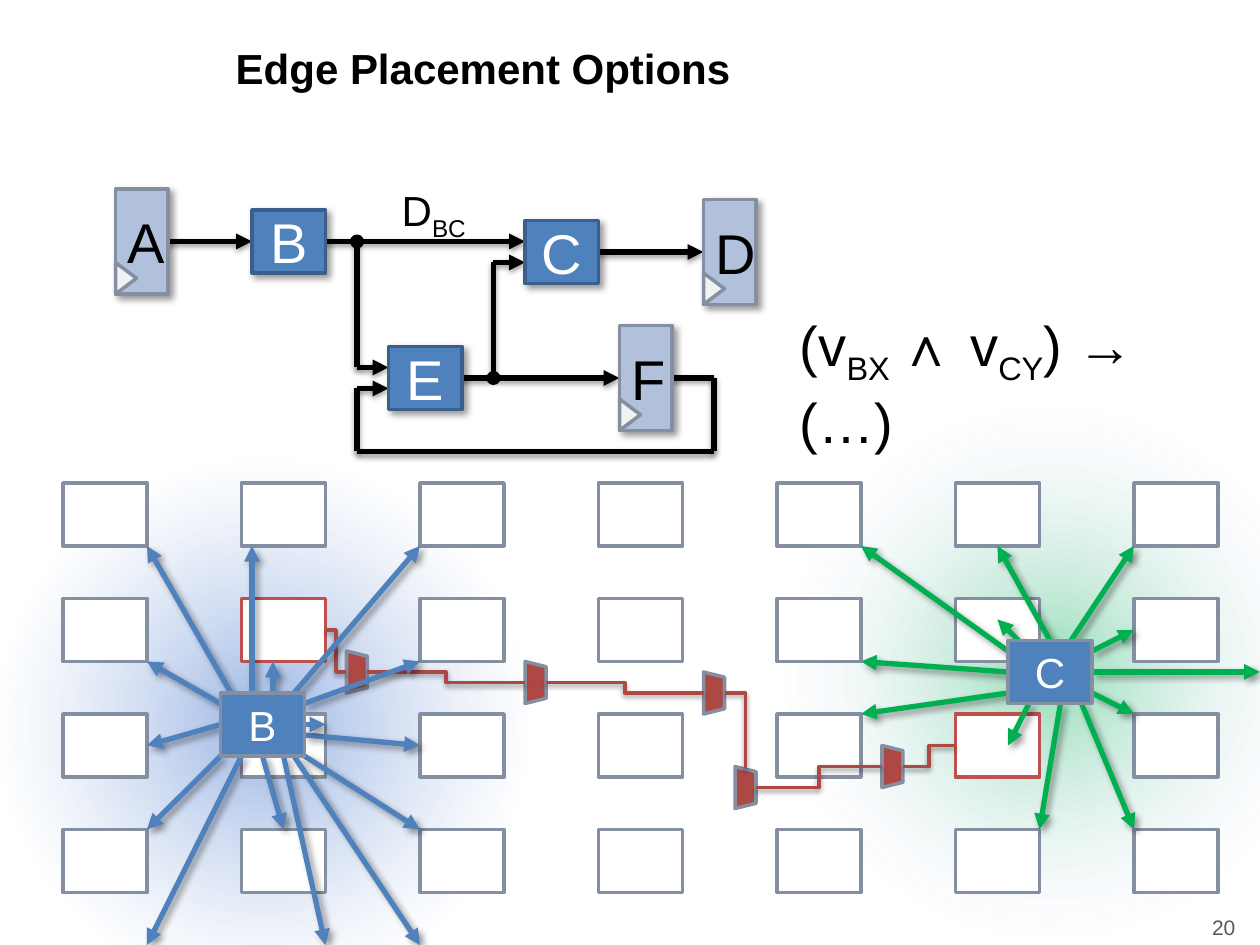
from dataclasses import dataclass
from itertools import pairwise, product

from lxml import etree
from pptx import Presentation
from pptx.dml.color import RGBColor
from pptx.enum import shapes as kinds, text as options
from pptx.oxml import ns
from pptx.util import Pt


@dataclass(frozen=True)
class Theme:
    """Colours, type sizes and shadows of the slide."""
    font: str = "Arial"
    black: str = "000000"
    white: str = "FFFFFF"
    grey: str = "595959"
    border: str = "848FA2"
    register: str = "B2C1DB"
    clock: str = "F2F2F2"
    logic: str = "4F81BD"
    logic_border: str = "3A5F8C"
    chosen: str = "C0504D"
    route: str = "AE4845"
    green: str = "00B050"
    glow_blue: str = "9AB5E4"
    glow_edge: str = "C2D1ED"
    number: int = 12
    heading: int = 24
    large: int = 32
    wire_shadow: tuple = (38, 3.1, 1.6, 90)
    box_shadow: tuple = (40, 4, 3, 45)


THEME = Theme()
SHAPE = kinds.MSO_SHAPE
LEFT, CENTER, RIGHT = options.PP_ALIGN.LEFT, options.PP_ALIGN.CENTER, options.PP_ALIGN.RIGHT


def add_element(parent, tag, **attributes):
    """Append a drawing element with the given attributes."""
    element = etree.SubElement(parent, ns.qn(f"a:{tag}"))
    for name, value in attributes.items():
        element.set(name, str(value))
    return element


def add_color(parent, color, opacity):
    """Append a colour with an opacity in percent."""
    add_element(add_element(parent, "srgbClr", val=color), "alpha", val=opacity * 1000)


def cast_shadow(effects, opacity, blur, distance, angle):
    """Put an outer shadow in an effect list."""
    shadow = add_element(effects, "outerShdw", blurRad=Pt(blur), dist=Pt(distance),
                         dir=angle * 60000, algn="ctr", rotWithShape=0)
    add_color(shadow, THEME.black, opacity)


def write(shape, text, size, color=THEME.black, align=CENTER, bold=False, wrap=True,
          anchor=options.MSO_ANCHOR.MIDDLE):
    """Write text, with the parts between underscores as subscripts."""
    frame = shape.text_frame
    frame.word_wrap, frame.vertical_anchor = wrap, anchor
    paragraph = frame.paragraphs[0]
    paragraph.alignment = align
    for index, part in enumerate(text.split("_")):
        if part:
            run = paragraph.add_run()
            run.text = part
            font = run.font
            font.name, font.size, font.bold = THEME.font, Pt(size), bold
            font.color.rgb = RGBColor.from_string(color)
            if index % 2:
                run.font._element.set("baseline", "-25000")


def add_box(shapes, kind, box, fill=None, line=None, rotation=0, shadow=None):
    """Draw a preset shape in a box of left, top, width and height."""
    shape = shapes.add_shape(kind, *map(Pt, box))
    shape.rotation = rotation
    if fill:
        shape.fill.solid()
        shape.fill.fore_color.rgb = RGBColor.from_string(fill)
    else:
        shape.fill.background()
    if line:
        shape.line.color.rgb = RGBColor.from_string(line)
        shape.line.width = Pt(2)
    else:
        shape.line.fill.background()
    shape.shadow.inherit = False
    if shadow:
        cast_shadow(shape._element.spPr.find(ns.qn("a:effectLst")), *shadow)
    return shape


def add_line(shapes, origin, start, end, color, width=3, arrow=False,
             shadow=THEME.wire_shadow, kind=kinds.MSO_CONNECTOR.STRAIGHT):
    """Draw a connector between two points measured from the origin."""
    ends = [Pt(base + offset) for point in (start, end) for base, offset in zip(origin, point)]
    connector = shapes.add_connector(kind, *ends)
    connector.line.color.rgb = RGBColor.from_string(color)
    connector.line.width = Pt(width)
    properties = connector._element.spPr
    if arrow:
        add_element(properties.find(ns.qn("a:ln")), "tailEnd", type="triangle")
    cast_shadow(add_element(properties, "effectLst"), *shadow)
    return connector


def add_glow(shapes, box, color, opacity):
    """Draw a round glow that fades out before the edge of its box."""
    shape = add_box(shapes, SHAPE.RECTANGLE, box)
    properties = shape._element.spPr
    empty = properties.find(ns.qn("a:noFill"))
    gradient = add_element(properties, "gradFill", rotWithShape=1)
    properties.replace(empty, gradient)
    stops = add_element(gradient, "gsLst")
    add_color(add_element(stops, "gs", pos=0), color, opacity)
    add_color(add_element(stops, "gs", pos=63000), THEME.glow_edge, 0)
    circle = add_element(gradient, "path", path="circle")
    add_element(circle, "fillToRect", l=50000, t=50000, r=50000, b=50000)


def add_circuit(slide, left, top):
    """Draw the netlist of registers, logic blocks and wires."""
    shapes = slide.shapes.add_group_shape().shapes
    wires = [
        [(30, 30), (78, 30)], [(120, 30), (234, 30)], [(276, 36), (336, 36)],
        [(138, 30), (138, 102), (156, 102)], [(198, 108), (288, 108)],
        [(318, 108), (342, 108), (342, 150), (138, 150), (138, 114), (156, 114)],
        [(216, 108), (216, 42), (234, 42)],
    ]
    for wire in wires:
        for start, end in pairwise(wire):
            add_line(shapes, (left, top), start, end, THEME.black, arrow=end == wire[-1])
    for x, y in [(138, 30), (216, 108)]:
        add_box(shapes, SHAPE.OVAL, (left + x - 3, top + y - 3, 6, 6), THEME.black, THEME.black)
    for name, x, y in [("A", 0, 0), ("D", 336, 6), ("F", 288, 78)]:
        register = add_box(shapes, SHAPE.RECTANGLE, (left + x, top + y, 30, 60),
                           THEME.register, THEME.border, shadow=THEME.box_shadow)
        write(register, name, THEME.large)
        add_box(shapes, SHAPE.ISOSCELES_TRIANGLE, (left + x - 3, top + y + 45, 18, 12),
                THEME.clock, THEME.border, rotation=90)
    for name, x, y in [("B", 78, 12), ("C", 234, 18), ("E", 156, 90)]:
        block = add_box(shapes, SHAPE.RECTANGLE, (left + x, top + y, 42, 36),
                        THEME.logic, THEME.logic_border, shadow=THEME.box_shadow)
        write(block, name, THEME.large, color=THEME.white)


def add_label(slide, box, text, size, **formats):
    """Place a text box."""
    write(slide.shapes.add_textbox(*map(Pt, box)), text, size, **formats)


def add_fabric(slide, left, top, columns=7, rows=4):
    """Draw the grid of cells with the two chosen cells and the route between them."""
    def cell(column, row):
        return left + column * 102, top + row * 66, 48, 36

    shapes = slide.shapes
    for column, row in product(range(columns), range(rows)):
        add_box(shapes, SHAPE.RECTANGLE, cell(column, row), THEME.white, THEME.border)
    for column, row in [(1, 1), (5, 2)]:
        add_box(shapes, SHAPE.RECTANGLE, cell(column, row), line=THEME.chosen)
    for x, y in [(168, 108), (270, 114), (372, 120), (390, 174), (474, 162)]:
        add_box(shapes, SHAPE.TRAPEZOID, (left + x - 12, top + y - 6, 24, 12),
                THEME.route, THEME.border, rotation=90)
    hops = [((150, 84), (162, 108)), ((174, 108), (264, 114)), ((276, 114), (366, 120)),
            ((468, 162), (396, 174)), ((510, 150), (480, 162)), ((378, 120), (390, 163))]
    for start, end in hops:
        hop = add_line(shapes, (left, top), start, end, THEME.route, width=2,
                       kind=kinds.MSO_CONNECTOR.ELBOW)
    hop._element.spPr.find(ns.qn("a:prstGeom")).set("prst", "bentConnector2")


def add_fan(slide, left, top, name, color, arrows):
    """Draw a block with arrows to the cells where it may be placed."""
    shapes = slide.shapes.add_group_shape().shapes
    for start, end in arrows:
        add_line(shapes, (left, top), start, end, color, arrow=True, shadow=THEME.box_shadow)
    block = add_box(slide.shapes, SHAPE.RECTANGLE, (left, top, 48, 36), THEME.logic, THEME.border)
    write(block, name, THEME.heading, color=THEME.white)


def main():
    """Build the slide and save it."""
    presentation = Presentation()
    presentation.slide_width, presentation.slide_height = Pt(720), Pt(540)
    slide = presentation.slides.add_slide(presentation.slide_layouts[5])
    add_glow(slide.shapes, (420, 222, 360, 324), THEME.green, 42)
    add_glow(slide.shapes, (-30, 252, 360, 324), THEME.glow_blue, 100)
    title = slide.shapes.title
    title.left, title.top, title.width, title.height = map(Pt, (127.5, 9.5, 525.5, 58))
    write(title, "Edge Placement Options", THEME.heading, align=LEFT, bold=True)
    add_label(slide, (545, 520, 168, 20), "20", THEME.number, color=THEME.grey, align=RIGHT)
    add_circuit(slide, 66, 108)
    top_left = {"align": LEFT, "anchor": options.MSO_ANCHOR.TOP}
    add_label(slide, (222.5, 102, 55, 36), "D_BC_", THEME.heading, wrap=False, **top_left)
    add_label(slide, (450, 174, 240, 46), "(v_BX _∧ v_CY_) → (…)", THEME.large, **top_left)
    add_fabric(slide, 36, 276)
    add_fan(slide, 126, 396, "B", THEME.logic, [
        ((48, 6), (114, -18)), ((6, 0), (-42, -84)), ((30, 0), (30, -18)),
        ((48, 24), (114, 30)), ((48, 36), (114, 78)), ((42, 36), (114, 144)),
        ((36, 36), (60, 144)), ((24, 36), (36, 78)), ((12, 36), (-42, 144)),
        ((0, 36), (-42, 78)), ((0, 18), (-42, 30)), ((0, 6), (-42, -18)),
        ((48, 18), (60, 18)), ((18, 0), (18, -84)), ((42, 0), (114, -84))])
    add_fan(slide, 576, 366, "C", THEME.green, [
        ((6, 0), (-6, -12)), ((0, 6), (-84, -54)), ((24, 0), (-6, -54)),
        ((36, 0), (72, -54)), ((48, 6), (72, -6)), ((48, 18), (144, 18)),
        ((48, 30), (72, 42)), ((42, 36), (72, 108)), ((30, 36), (18, 108)),
        ((12, 36), (0, 60)), ((0, 30), (-84, 42)), ((0, 18), (-84, 12))])
    presentation.save("out.pptx")


if __name__ == "__main__":
    main()
